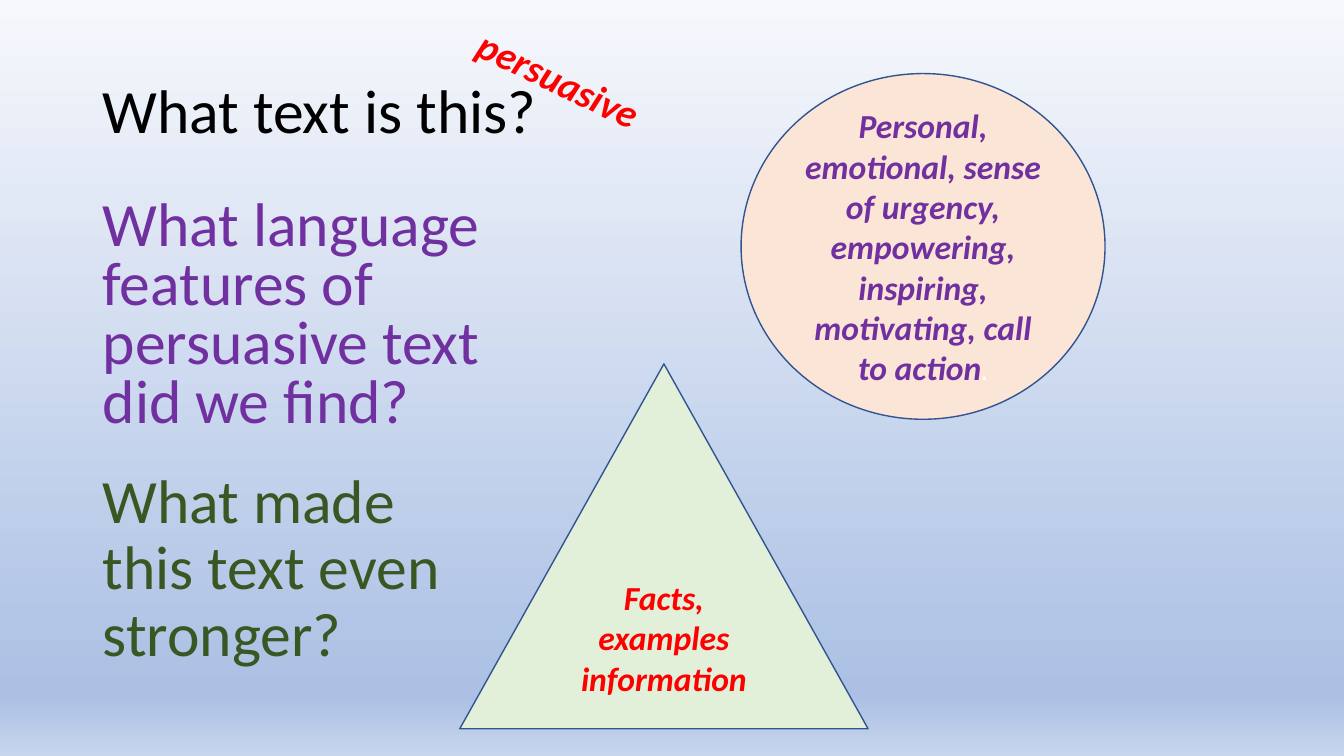
import copy

import pptx
import pptx.dml.color
import pptx.enum.shapes
import pptx.enum.text
import pptx.oxml.ns
import pptx.util

RGB = pptx.dml.color.RGBColor
SHAPE = pptx.enum.shapes.MSO_SHAPE
ALIGN = pptx.enum.text.PP_ALIGN
ANCHOR = pptx.enum.text.MSO_ANCHOR

BLACK = RGB(0x00, 0x00, 0x00)
WHITE = RGB(0xFF, 0xFF, 0xFF)
RED = RGB(0xFF, 0x00, 0x00)
PURPLE = RGB(0x70, 0x30, 0xA0)
GREEN = RGB(0x38, 0x57, 0x23)
PEACH = RGB(0xFB, 0xE5, 0xD6)
MINT = RGB(0xE2, 0xF0, 0xD9)
NAVY = RGB(0x32, 0x54, 0x91)
SKY = [(0, RGB(0xF6, 0xF8, 0xFC)), (0.92, RGB(0xAB, 0xC0, 0xE4)),
       (1, RGB(0xC7, 0xD5, 0xED))]

WIDE, HIGH = 13.33, 7.5
LEFT = 0.92
# top, width, height, line spacing, colour, text
ASKS = [
    (0.4, 4.83, 1.45, 0.9, BLACK, "What text is this?"),
    (1.85, 4.22, 2.6, 0.8, PURPLE,
     "What language features of persuasive text did we find?"),
    (4.52, 4.05, 2.27, 0.9, GREEN, "What made this text even stronger?"),
]


def inches(box):
    return [pptx.util.Inches(n) for n in box]


def add_run(para, text, size, color, strong=False):
    run = para.add_run()
    run.text = text
    font = run.font
    font.name = "Calibri"
    font.size = pptx.util.Pt(size)
    font.color.rgb = color
    font.bold = font.italic = strong


def paint_sky(slide):
    fill = slide.background.fill
    fill.gradient()
    fill.gradient_angle = 270
    stops = slide.element.find(".//" + pptx.oxml.ns.qn("a:gsLst"))
    stops.append(copy.deepcopy(stops[-1]))
    for stop, (place, color) in zip(fill.gradient_stops, SKY):
        stop.position = place
        stop.color.rgb = color


def add_text(slide, box, anchor):
    """Add a wrapping text box and return it with its first paragraph."""
    note = slide.shapes.add_textbox(*inches(box))
    frame = note.text_frame
    frame.word_wrap = True
    frame.vertical_anchor = anchor
    return note, frame.paragraphs[0]


def add_asks(slide, left):
    for top, width, height, space, color, text in ASKS:
        para = add_text(slide, (left, top, width, height), ANCHOR.MIDDLE)[1]
        para.line_spacing = space
        add_run(para, text, 44, color)


def add_label(slide, box):
    note, para = add_text(slide, box, ANCHOR.TOP)
    note.rotation = 25.7
    add_run(para, "persuasive", 28, RED, True)


def add_answer(slide, kind, box, fill, runs):
    shape = slide.shapes.add_shape(kind, *inches(box))
    shape.shadow.inherit = False
    shape.fill.solid()
    shape.fill.fore_color.rgb = fill
    shape.line.color.rgb = NAVY
    shape.line.width = pptx.util.Pt(1)
    frame = shape.text_frame
    frame.word_wrap = True
    frame.vertical_anchor = ANCHOR.MIDDLE
    para = frame.paragraphs[0]
    para.alignment = ALIGN.CENTER
    for text, size, color in runs:
        add_run(para, text, size, color, True)


def main():
    deck = pptx.Presentation()
    deck.slide_width, deck.slide_height = inches((WIDE, HIGH))
    slide = deck.slides.add_slide(deck.slide_layouts[6])
    paint_sky(slide)
    add_asks(slide, LEFT)
    add_label(slide, (4.55, 0.66, 2.66, 0.57))
    add_answer(slide, SHAPE.OVAL, (7.35, 0.73, 3.61, 3.43), PEACH, [
        ("Personal, emotional, sense of urgency, empowering, inspiring, "
         "motivating, call to action", 24, PURPLE),
        (".", 18, WHITE),
    ])
    add_answer(slide, SHAPE.ISOSCELES_TRIANGLE, (4.56, 3.61, 4.05, 3.62),
               MINT, [("Facts, examples information", 24, RED)])
    deck.save("out.pptx")


if __name__ == "__main__":
    main()
